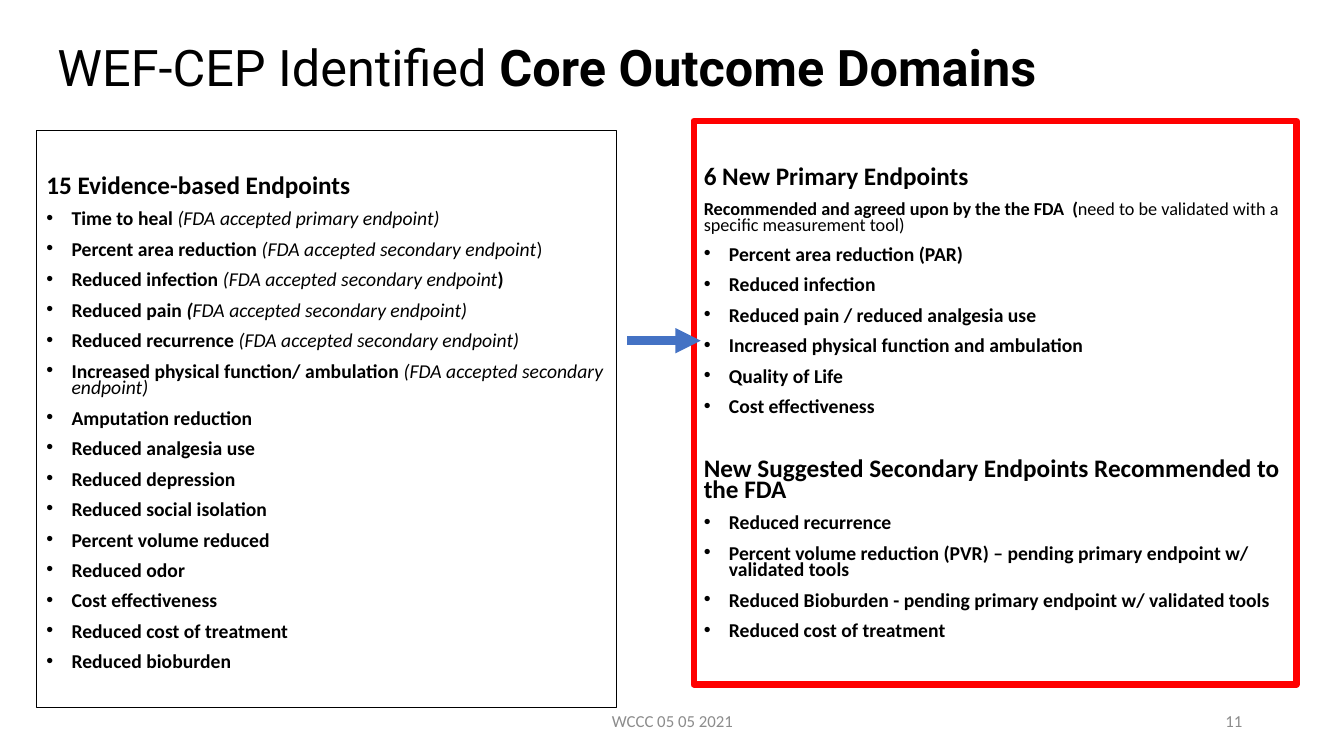
from lxml import etree
from pptx import Presentation
from pptx import util as u
from pptx.dml.color import RGBColor
from pptx.enum import shapes, text
from pptx.oxml import ns

IN = u.Inches


def color(code):
    return RGBColor.from_string(code)


class Deck:
    font, head, ink, gray, blue = "Calibri", "Roboto", "000000", "8C8C8C", "4472C4"

    def __init__(self):
        self.prs = Presentation()
        self.prs.slide_width, self.prs.slide_height = IN(13.33), IN(7.5)
        self.slide = self.prs.slides.add_slide(self.prs.slide_layouts[3])

    def place(self, shape, box):
        shape.left, shape.top, shape.width, shape.height = map(IN, box)

    def runs(self, para, parts, size, font=None, ink=None):
        """Add (words, style) parts; style holds b for bold, i for italic."""
        for words, style in parts:
            run = para.add_run()
            run.text = words
            face = run.font
            face.name, face.size = font or self.font, u.Pt(size)
            face.bold, face.italic = "b" in style, "i" in style
            face.color.rgb = color(ink or self.ink)

    def title(self, box, parts):
        shape = self.slide.shapes.title
        self.place(shape, box)
        frame = shape.text_frame
        frame.word_wrap, frame.auto_size = True, text.MSO_AUTO_SIZE.NONE
        frame.vertical_anchor = text.MSO_ANCHOR.MIDDLE
        para = frame.paragraphs[0]
        para.alignment, para.line_spacing = text.PP_ALIGN.LEFT, 0.9
        self.runs(para, parts, 36, self.head)

    def mark(self, para, dot):
        props = para._p.get_or_add_pPr()
        props.set("marL", str(IN(0.25) if dot else 0))
        props.set("indent", str(IN(-0.25) if dot else 0))
        if dot:
            etree.SubElement(props, ns.qn("a:buFont")).set("typeface", "Arial")
            etree.SubElement(props, ns.qn("a:buChar")).set("char", "•")
        else:
            etree.SubElement(props, ns.qn("a:buNone"))

    def panel(self, idx, box, edge, width, rows):
        """Fill a body placeholder with (kind, parts) rows."""
        shape = self.slide.placeholders[idx]
        self.place(shape, box)
        shape.line.color.rgb, shape.line.width = color(edge), u.Pt(width)
        frame = shape.text_frame
        frame.word_wrap, frame.auto_size = True, text.MSO_AUTO_SIZE.NONE
        frame.vertical_anchor = text.MSO_ANCHOR.TOP
        frame.margin_top = IN(0.47)
        sizes = {"head": 18, "next": 18, "note": 13, "item": 14}
        for n, (kind, parts) in enumerate(rows):
            para = frame.add_paragraph() if n else frame.paragraphs[0]
            self.mark(para, kind == "item")
            para.line_spacing = 0.7
            gap = 31 if kind == "next" else 10
            para.space_before = u.Pt(gap if n else 0)
            self.runs(para, parts, sizes[kind])

    def arrow(self, start, end):
        line = self.slide.shapes.add_connector(
            shapes.MSO_CONNECTOR.STRAIGHT, *map(IN, start + end))
        line.line.color.rgb, line.line.width = color(self.blue), u.Pt(6)
        edge = line.line._get_or_add_ln()
        etree.SubElement(edge, ns.qn("a:tailEnd")).set("type", "triangle")
        etree.SubElement(line._element.spPr, ns.qn("a:effectLst"))

    def label(self, box, words, align):
        frame = self.slide.shapes.add_textbox(*map(IN, box)).text_frame
        frame.word_wrap = True
        frame.vertical_anchor = text.MSO_ANCHOR.MIDDLE
        para = frame.paragraphs[0]
        para.alignment = align
        self.runs(para, [(words, "")], 12, ink=self.gray)


def items(*names):
    return [("item", [(name, "b")]) for name in names]


def main():
    deck = Deck()

    # Title
    deck.title((0.47, 0.19, 11.12, 1.01),
               [("WEF-CEP Identified ", ""), ("Core Outcome Domains", "b")])

    # Evidence-based endpoints
    second = "FDA accepted secondary endpoint"
    rated = [
        [("Time to heal ", "b"), ("(FDA accepted primary endpoint)", "i")],
        [("Percent area reduction ", "b"), (f"({second}", "i"), (")", "")],
        [("Reduced infection ", "b"), (f"({second}", "i"), (")", "b")],
        [("Reduced pain ", "b"), ("(", "bi"), (f"{second})", "i")],
        [("Reduced recurrence ", "b"), (f"({second})", "i")],
        [("Increased physical function/ ambulation ", "b"), (f"({second})", "i")],
    ]
    deck.panel(1, (0.36, 1.29, 5.76, 5.73), "000000", 0.75, [
        ("head", [("15 Evidence-based Endpoints", "b")]),
        *[("item", parts) for parts in rated],
        *items("Amputation reduction", "Reduced analgesia use",
               "Reduced depression", "Reduced social isolation",
               "Percent volume reduced", "Reduced odor", "Cost effectiveness",
               "Reduced cost of treatment", "Reduced bioburden"),
    ])

    # New primary and secondary endpoints
    deck.panel(2, (6.88, 1.2, 5.98, 5.59), "FF0000", 4.5, [
        ("head", [("6 New Primary Endpoints", "b")]),
        ("note", [("Recommended and agreed upon by the the FDA  (", "b"),
                  ("need to be validated with a specific measurement tool)", "")]),
        *items("Percent area reduction (PAR)", "Reduced infection",
               "Reduced pain / reduced analgesia use",
               "Increased physical function and ambulation",
               "Quality of Life", "Cost effectiveness"),
        ("next", [("New Suggested Secondary Endpoints Recommended to the FDA", "b")]),
        *items("Reduced recurrence",
               "Percent volume reduction (PVR) – pending primary endpoint w/ validated tools",
               "Reduced Bioburden - pending primary endpoint w/ validated tools",
               "Reduced cost of treatment"),
    ])

    # Arrow between the panels
    deck.arrow((6.22, 3.38), (6.95, 3.38))

    # Footer
    deck.label((4.42, 6.95, 4.5, 0.4), "WCCC 05 05 2021", text.PP_ALIGN.CENTER)
    deck.label((9.42, 6.95, 3, 0.4), "11", text.PP_ALIGN.RIGHT)

    deck.prs.save("out.pptx")


if __name__ == "__main__":
    main()
